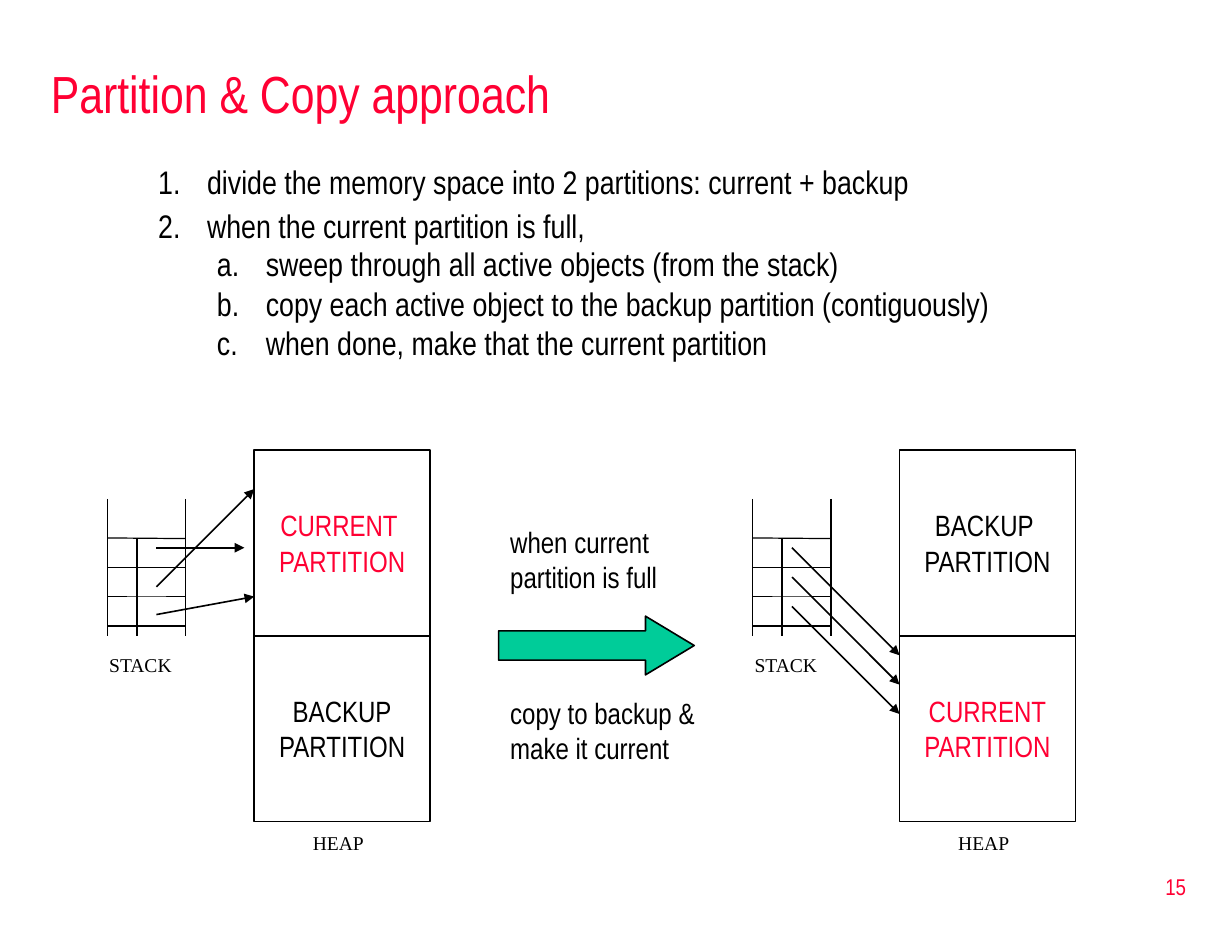
from dataclasses import dataclass

import pptx
import pptx.dml.color
import pptx.enum.shapes
import pptx.enum.text
import pptx.oxml.ns
import pptx.util
from lxml import etree

Pt = pptx.util.Pt
Shape = pptx.enum.shapes.MSO_SHAPE
Align = pptx.enum.text.PP_ALIGN
Anchor = pptx.enum.text.MSO_ANCHOR
qn = pptx.oxml.ns.qn


@dataclass(frozen=True)
class Theme:
    """Colours, fonts and type sizes of the slide."""
    accent: str = "FF0033"
    ink: str = "000000"
    paper: str = "FFFFFF"
    arrow: str = "00CC99"
    sans: str = "Arial Narrow"
    serif: str = "Times New Roman"
    title: int = 32
    body: int = 20
    label: int = 18
    number: int = 14
    caption: int = 12


THEME = Theme()


def rgb(colour):
    """Return a colour object for a hex string."""
    return pptx.dml.color.RGBColor.from_string(colour)


def write(paragraph, words, size, colour=THEME.ink, font=THEME.sans):
    """Add one formatted run to a paragraph."""
    run = paragraph.add_run()
    run.text = words
    run.font.name = font
    run.font.size = Pt(size)
    run.font.color.rgb = rgb(colour)


def text_frame(slide, box, margins=(7.2, 3.6), wrap=True):
    """Add a text box and return its frame."""
    frame = slide.shapes.add_textbox(*map(Pt, box)).text_frame
    frame.word_wrap = wrap
    frame.margin_left = frame.margin_right = Pt(margins[0])
    frame.margin_top = frame.margin_bottom = Pt(margins[1])
    return frame


def block(slide, kind, box, fill=None, outline=True):
    """Add a flat preset shape with optional fill and outline."""
    shape = slide.shapes.add_shape(kind, *map(Pt, box))
    shape.shadow.inherit = False
    if fill:
        shape.fill.solid()
        shape.fill.fore_color.rgb = rgb(fill)
    else:
        shape.fill.background()
    if outline:
        shape.line.color.rgb = rgb(THEME.ink)
        shape.line.width = Pt(1)
    else:
        shape.line.fill.background()
    return shape


def stroke(slide, start, end, width=0.75, head=False):
    """Draw a straight line, with an arrowhead at its end if asked."""
    line = slide.shapes.add_connector(
        pptx.enum.shapes.MSO_CONNECTOR.STRAIGHT, *map(Pt, (*start, *end)))
    line.line.color.rgb = rgb(THEME.ink)
    line.line.width = Pt(width)
    if head:
        etree.SubElement(line.line._get_or_add_ln(), qn("a:tailEnd"), type="triangle")
    etree.SubElement(line._element.spPr, qn("a:effectLst"))


def heading(slide, box, words):
    """Place and format the title placeholder."""
    title = slide.shapes.title
    title.left, title.top, title.width, title.height = map(Pt, box)
    frame = title.text_frame
    frame.vertical_anchor = Anchor.MIDDLE
    paragraph = frame.paragraphs[0]
    paragraph.alignment = Align.LEFT
    write(paragraph, words, THEME.title, THEME.accent)


def steps(slide, box, items):
    """List numbered steps with lettered sub-steps."""
    frame = text_frame(slide, box)
    for index, (level, words) in enumerate(items):
        paragraph = frame.paragraphs[0] if index == 0 else frame.add_paragraph()
        paragraph.level = level
        paragraph.space_before = Pt(2.5)
        paragraph.line_spacing = (1.0, 0.9)[level]
        properties = paragraph._p.get_or_add_pPr()
        properties.set("marL", str(Pt(66 + 36 * level)))
        properties.set("indent", str(Pt(-30)))
        etree.SubElement(properties, qn("a:buFont"), typeface=THEME.sans)
        etree.SubElement(properties, qn("a:buAutoNum"),
                         type=("arabicPeriod", "alphaLcPeriod")[level])
        write(paragraph, words, THEME.body)


def caption(slide, box, words):
    """Add a small label without margins."""
    frame = text_frame(slide, box, (0, 0), wrap=False)
    write(frame.paragraphs[0], words, THEME.caption, font=THEME.serif)


def heap(slide, box, halves):
    """Stack two labelled partitions above their caption."""
    left, top, width, height = box
    half = height / len(halves)
    for index, (lines, colour) in enumerate(halves):
        partition = block(slide, Shape.RECTANGLE, (left, top + index * half, width, half))
        frame = partition.text_frame
        frame.word_wrap = False
        frame.vertical_anchor = Anchor.MIDDLE
        for row, words in enumerate(lines):
            paragraph = frame.paragraphs[0] if row == 0 else frame.add_paragraph()
            paragraph.alignment = Align.CENTER
            write(paragraph, words, THEME.label, colour)
    caption(slide, (left + 36, top + height + 6, 32, 14), "HEAP")


def stack(slide, box):
    """Draw an open-ended stack of cells with a caption."""
    left, top, width, height = box
    right, bottom = left + width, top + height
    for side in (left, right):
        stroke(slide, (side, top), (side, bottom))
    for row in range(1, 4):
        level = top + 24 + 18 * row
        stroke(slide, (left, level), (right, level))
    block(slide, Shape.RECTANGLE, (left + 12, top + 60, 24, 12), THEME.paper, outline=False)
    stroke(slide, (left, top + 24), (right, top + 24.4))
    stroke(slide, (left + 18, top + 24), (left + 18, bottom), 1)
    caption(slide, (left + 1, bottom + 10.5, 40, 14), "STACK")


def memory(slide, box, halves, pointers):
    """Show a stack pointing into a two-part heap."""
    left, top, width, height = box
    heap(slide, (left + 90, top, width - 90, height), halves)
    stack(slide, (left, top + 30, 48, 84))
    for x1, y1, x2, y2 in pointers:
        stroke(slide, (left + x1, top + y1), (left + x2, top + y2), 1, head=True)


def transition(slide, box, above, below):
    """Draw the block arrow with a note above and below."""
    left, top, width, height = box
    arrow = block(slide, Shape.RIGHT_ARROW, (left, top + 60, width, 36), THEME.arrow)
    arrow.adjustments[0], arrow.adjustments[1] = 0.5, 0.83
    for words, offset, span in ((above, 0, width - 6), (below, height - 50, width + 12)):
        frame = text_frame(slide, (left, top + offset, span, 50))
        write(frame.paragraphs[0], words, THEME.label)


def page_number(slide, box, number):
    """Add the page number at the right of its box."""
    frame = text_frame(slide, box)
    frame.vertical_anchor = Anchor.MIDDLE
    paragraph = frame.paragraphs[0]
    paragraph.alignment = Align.RIGHT
    write(paragraph, number, THEME.number, THEME.accent)


def main():
    """Build the slide and save it."""
    deck = pptx.Presentation()
    deck.slide_width, deck.slide_height = Pt(756), Pt(576)
    slide = deck.slides.add_slide(deck.slide_layouts[5])
    page_number(slide, (577.5, 525, 157.5, 38), "15")
    heading(slide, (24, 30, 714, 54), "Partition & Copy approach")
    steps(slide, (54, 96, 685, 144), [
        (0, "divide the memory space into 2 partitions: current + backup"),
        (0, "when the current partition is full,"),
        (1, "sweep through all active objects (from the stack)"),
        (1, "copy each active object to the backup partition (contiguously)"),
        (1, "when done, make that the current partition"),
    ])
    memory(slide, (66, 276, 198, 228),
           [(("CURRENT ", "PARTITION"), THEME.accent), (("BACKUP", "PARTITION"), THEME.ink)],
           [(30, 101, 90, 90), (30, 84, 90, 24), (30, 60, 84, 60)])
    memory(slide, (462, 276, 198, 228),
           [(("BACKUP ", "PARTITION"), THEME.ink), (("CURRENT", "PARTITION"), THEME.accent)],
           [(24, 60 + drop, 90, 126 + drop) for drop in (0, 18, 36)])
    transition(slide, (306, 318, 120, 155),
               "when current partition is full", "copy to backup & make it current")
    deck.save("out.pptx")


if __name__ == "__main__":
    main()
